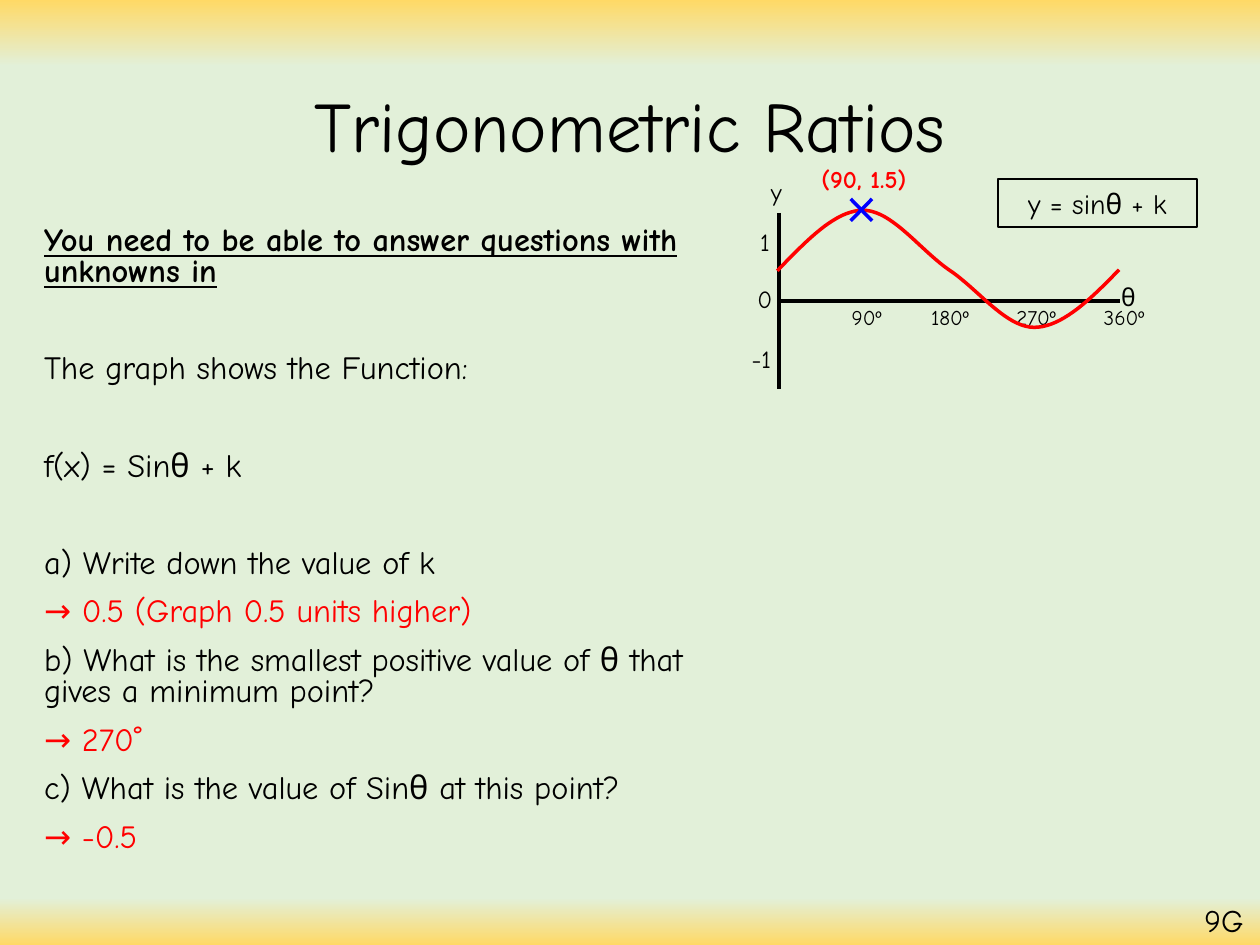
"""Build the Trigonometric Ratios slide with its worked questions and sine graph."""
import lxml.etree
import pptx
import pptx.dml.color
import pptx.enum.shapes
import pptx.enum.text
import pptx.oxml.ns
import pptx.util

Cm = pptx.util.Cm
Pt = pptx.util.Pt
qn = pptx.oxml.ns.qn
LEFT = pptx.enum.text.PP_ALIGN.LEFT
CENTER = pptx.enum.text.PP_ALIGN.CENTER
FONT = "Comic Neue"
BLACK, RED, BLUE = "000000", "FF0000", "0000FF"
GOLD, GREEN = "FFD966", "E2F0D9"


def color(target, value):
    target.rgb = pptx.dml.color.RGBColor.from_string(value)


def write(paragraph, text, size, value=BLACK, align=LEFT):
    paragraph.text = text
    paragraph.alignment = align
    paragraph.font.name = FONT
    paragraph.font.size = Pt(size)
    color(paragraph.font.color, value)


presentation = pptx.Presentation()
presentation.slide_width = Cm(25.4)
presentation.slide_height = Cm(19.05)
slide = presentation.slides.add_slide(presentation.slide_layouts[5])

background = slide.background.fill
background.gradient()
background.gradient_angle = 270
stops = slide.element.find(".//" + qn("a:gsLst"))
for stop in list(stops):
    stops.remove(stop)
for percent, value in [(0, GOLD), (7, GREEN), (95, GREEN), (100, GOLD)]:
    stop = lxml.etree.SubElement(stops, qn("a:gs"), pos=str(percent * 1000))
    lxml.etree.SubElement(stop, qn("a:srgbClr"), val=value)

title = slide.shapes.title
title.left, title.top, title.width, title.height = Cm(1.75), Cm(1.22), Cm(21.9), Cm(2.77)
title.text_frame.vertical_anchor = pptx.enum.text.MSO_ANCHOR.MIDDLE
write(title.text_frame.paragraphs[0], "Trigonometric Ratios", 40.5, align=CENTER)
title.text_frame.paragraphs[0].line_spacing = 0.9

NEAR, FAR = 10, 37.7
questions = [
    ("You need to be able to answer questions with unknowns in", BLACK, NEAR),
    ("The graph shows the Function:", BLACK, FAR),
    ("f(x) = Sinθ + k", BLACK, FAR),
    ("a) Write down the value of k", BLACK, FAR),
    ("→ 0.5 (Graph 0.5 units higher)", RED, NEAR),
    ("b) What is the smallest positive value of θ that gives a minimum point?", BLACK, NEAR),
    ("→ 270˚", RED, NEAR),
    ("c) What is the value of Sinθ at this point?", BLACK, NEAR),
    ("→ -0.5", RED, NEAR),
]
body = slide.shapes.add_textbox(0, Cm(4.45), Cm(14.4), Cm(13.77)).text_frame
body.word_wrap = True
body.margin_left = Cm(0.89)
for index, (text, value, gap) in enumerate(questions):
    paragraph = body.add_paragraph() if index else body.paragraphs[0]
    write(paragraph, text, 18.5, value)
    paragraph.line_spacing = 0.8
    paragraph.space_before = Pt(gap)
body.paragraphs[0].font.bold = True
body.paragraphs[0].font.underline = True

axes = [
    (15.7, 6.07, 22.58, 6.07, 2),
    (15.7, 4.29, 15.7, 7.85, 2.25),
]
cross = [
    (17.15, 4.01, 17.58, 4.45, 2),
    (17.58, 4.01, 17.15, 4.45, 2),
]

labels = [
    ("1", 14.99, 4.45, 0.86, 14, CENTER),
    ("-1", 14.83, 6.81, 1.04, 14, CENTER),
    ("0", 14.99, 5.61, 0.86, 14, CENTER),
    ("90º", 16.92, 6.02, 1.24, 12, LEFT),
    ("180º", 18.52, 6.02, 1.42, 12, LEFT),
    ("270º", 20.24, 6.02, 1.73, 12, LEFT),
    ("360º", 22, 6.02, 1.73, 12, LEFT),
    ("y", 15.29, 3.45, 0.79, 14, LEFT),
    ("θ", 22.35, 5.56, 0.79, 14, LEFT),
    ("(90, 1.5)", 16.31, 3.18, 2.97, 14, LEFT),
    ("9G", 24.03, 18.03, 1.37, 18, LEFT),
]
for text, left, top, width, size, align in labels:
    frame = slide.shapes.add_textbox(Cm(left), Cm(top), Cm(width), Cm(size * 0.06)).text_frame
    frame.word_wrap = text != "9G"
    is_peak = text == "(90, 1.5)"
    write(frame.paragraphs[0], text, size, RED if is_peak else BLACK, align)
    frame.paragraphs[0].font.bold = is_peak

equation = slide.shapes.add_shape(
    pptx.enum.shapes.MSO_SHAPE.RECTANGLE, Cm(20.12), Cm(3.61), Cm(4.01), Cm(0.97))
equation.shadow.inherit = False
equation.fill.background()
color(equation.line.color, BLACK)
equation.line.width = Pt(0.75)
write(equation.text_frame.paragraphs[0], "y = sinθ + k", 16, align=CENTER)

controls = [
    (15.67, 5.46), (16.26, 4.85), (16.84, 4.24), (17.4, 4.24),
    (17.98, 4.24), (18.54, 5.03), (19.13, 5.44),
    (19.71, 5.82), (20.27, 6.6), (20.85, 6.6),
    (21.41, 6.6), (22, 6.02), (22.56, 5.44),
]
STEPS = 20
points = []
for first in range(0, len(controls) - 1, 3):
    for step in range(1, STEPS + 1):
        t = step / STEPS
        weights = ((1 - t) ** 3, 3 * t * (1 - t) ** 2, 3 * t ** 2 * (1 - t), t ** 3)
        segment = controls[first:first + 4]
        points.append(tuple(
            Cm(sum(weight * point[axis] for weight, point in zip(weights, segment)))
            for axis in (0, 1)))
builder = slide.shapes.build_freeform(Cm(controls[0][0]), Cm(controls[0][1]))
builder.add_line_segments(points, close=False)
curve = builder.convert_to_shape()
curve.shadow.inherit = False
curve.fill.background()
color(curve.line.color, RED)
curve.line.width = Pt(2)

marker = slide.shapes.add_group_shape()
for shapes, lines, value in [(slide.shapes, axes, BLACK), (marker.shapes, cross, BLUE)]:
    for x1, y1, x2, y2, width in lines:
        connector = shapes.add_connector(
            pptx.enum.shapes.MSO_CONNECTOR.STRAIGHT, Cm(x1), Cm(y1), Cm(x2), Cm(y2))
        color(connector.line.color, value)
        connector.line.width = Pt(width)
        lxml.etree.SubElement(connector.element.spPr, qn("a:effectLst"))
        if value == BLACK:
            curve.element.addprevious(connector.element)

presentation.save("out.pptx")
